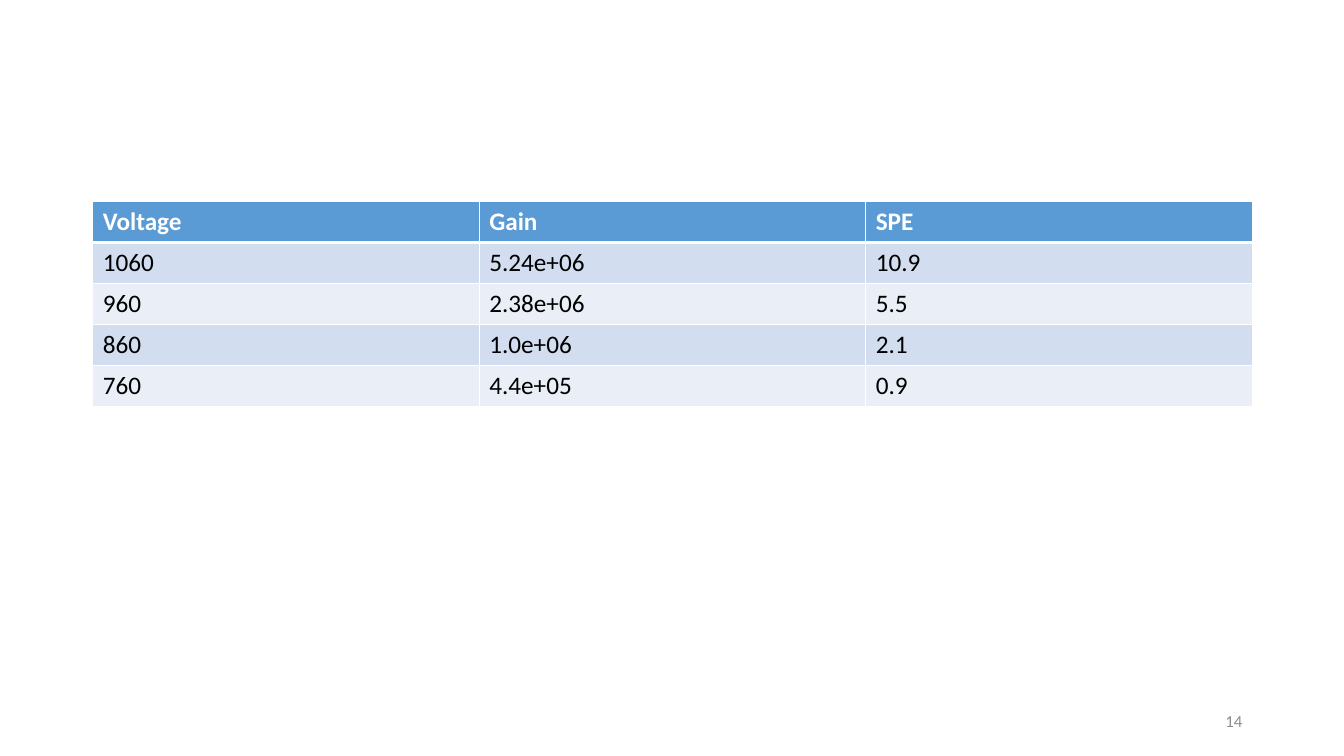
from lxml import etree
from pptx import Presentation
from pptx.dml.color import RGBColor
from pptx.enum.text import MSO_ANCHOR, PP_ALIGN
from pptx.oxml.ns import qn
from pptx.util import Inches, Pt

MIDDLE, RIGHT = MSO_ANCHOR.MIDDLE, PP_ALIGN.RIGHT

ROWS = [
    ("Voltage", "Gain", "SPE"),
    ("1060", "5.24e+06", "10.9"),
    ("960", "2.38e+06", "5.5"),
    ("860", "1.0e+06", "2.1"),
    ("760", "4.4e+05", "0.9"),
]
PAGE = "14"
FONT = "Calibri"
COLORS = {
    "head": "5B9BD5",
    "odd": "D2DEEF",
    "even": "EAEFF7",
    "white": "FFFFFF",
    "black": "000000",
    "gray": "8C8C8C",
}
LEFT, TOP, WIDTH, HEIGHT = 0.92, 2, 11.5, 2.03


def color(name):
    return RGBColor.from_string(COLORS[name])


def style(para, size, name, bold=False):
    font = para.font
    font.name, font.size, font.bold = FONT, Pt(size), bold
    font.color.rgb = color(name)


def add_edge(cell, side, width):
    """Add a white border; side is L, R, T or B, added in that order."""
    props = cell._tc.get_or_add_tcPr()
    line = etree.SubElement(props, qn("a:ln" + side), w=str(Pt(width)))
    fill = etree.SubElement(line, qn("a:solidFill"))
    etree.SubElement(fill, qn("a:srgbClr"), val=COLORS["white"])


def add_grid(slide):
    count, width = len(ROWS), len(ROWS[0])
    table = slide.shapes.add_table(
        count, width, Inches(LEFT), Inches(TOP), Inches(WIDTH), Inches(HEIGHT)
    ).table
    for r, row in enumerate(ROWS):
        head = r == 0
        band = "head" if head else "odd" if r % 2 else "even"
        edges = {"L": 1, "R": 1, "T": 3 if r == 1 else 1, "B": 3 if head else 1}
        for c, text in enumerate(row):
            cell = table.cell(r, c)
            cell.text = text
            style(cell.text_frame.paragraphs[0], 18, "white" if head else "black", head)
            for side, size in edges.items():
                add_edge(cell, side, size)
            cell.fill.solid()
            cell.fill.fore_color.rgb = color(band)


def add_page(slide):
    box = slide.shapes.add_textbox(Inches(9.42), Inches(6.95), Inches(3), Inches(0.4))
    frame = box.text_frame
    frame.word_wrap = True
    frame.vertical_anchor = MIDDLE
    para = frame.paragraphs[0]
    para.text = PAGE
    para.alignment = RIGHT
    style(para, 12, "gray")


def main():
    deck = Presentation()
    deck.slide_width, deck.slide_height = Inches(13.33), Inches(7.5)
    slide = deck.slides.add_slide(deck.slide_layouts[6])
    add_grid(slide)
    add_page(slide)
    deck.save("out.pptx")


if __name__ == "__main__":
    main()
